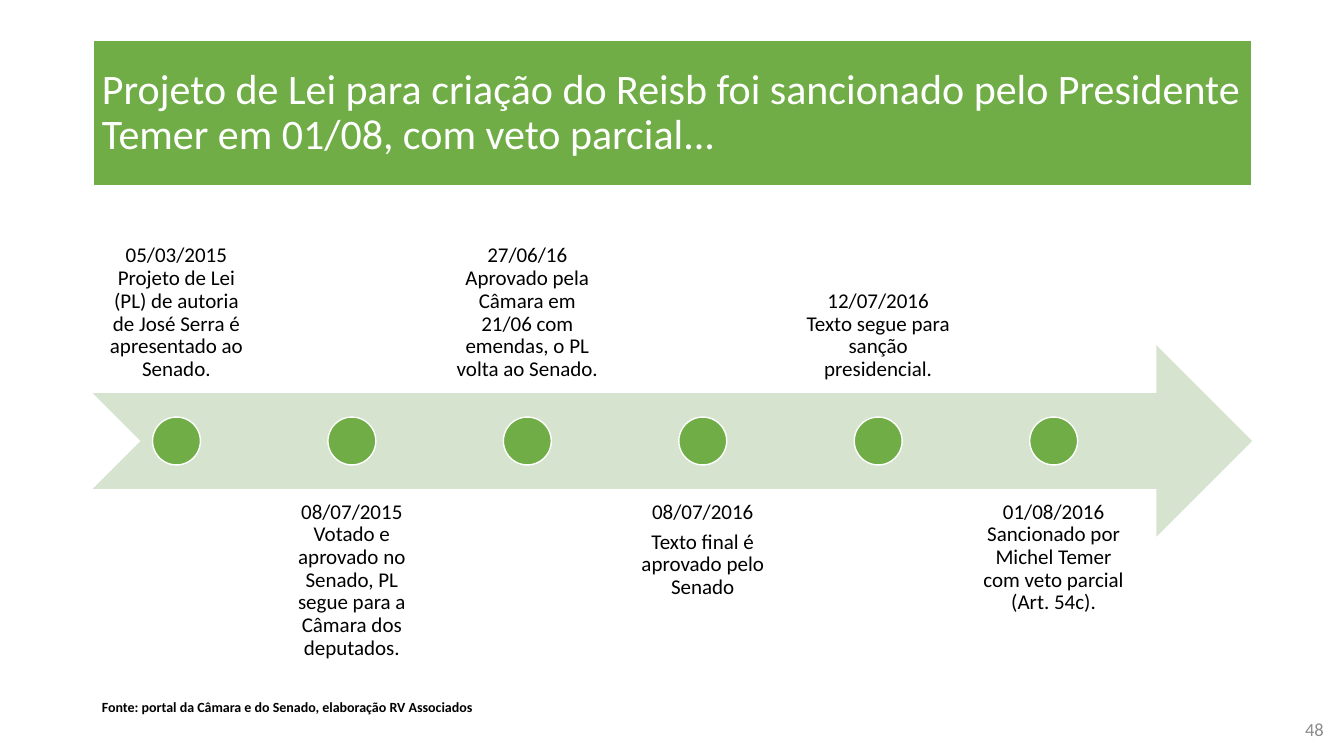
"""Build the timeline slide of the Reisb bill."""
from pptx import Presentation
from pptx.dml.color import RGBColor
from pptx.enum.shapes import MSO_SHAPE as Shape
from pptx.enum.text import MSO_ANCHOR as Anchor, MSO_AUTO_SIZE as AutoSize, PP_ALIGN as Align
from pptx.oxml.ns import qn
from pptx.util import Inches, Pt

GREEN = RGBColor(0x70, 0xAD, 0x47)
PALE = RGBColor(0xD5, 0xE3, 0xCF)
WHITE = RGBColor(0xFF, 0xFF, 0xFF)
BLACK = RGBColor(0x00, 0x00, 0x00)
GREY = RGBColor(0x8C, 0x8C, 0x8C)

STEPS = [
    ["05/03/2015 Projeto de Lei (PL) de autoria de José Serra é apresentado ao Senado."],
    ["08/07/2015 Votado e aprovado no Senado, PL segue para a Câmara dos deputados."],
    ["27/06/16 Aprovado pela Câmara em 21/06 com emendas, o PL volta ao Senado."],
    ["08/07/2016", "Texto final é aprovado pelo Senado"],
    ["12/07/2016 Texto segue para sanção presidencial."],
    ["01/08/2016 Sancionado por Michel Temer com veto parcial (Art. 54c)."],
]


class TimelineSlide:
    """Hold the style, the grid and the current slide."""

    font = "Calibri"
    left, top, width = 0.92, 2, 11.5
    col, row = 1.74, 0.475
    label_width = 1.66
    inset = (0.09, 0.05)

    def __init__(self, prs):
        """Add a slide with a title and a body placeholder."""
        self.slide = prs.slides.add_slide(prs.slide_layouts[1])
        self.shapes = self.slide.shapes

    def box(self, col, row, width, rows):
        """Turn a grid place into left, top, width and height."""
        return (Inches(self.left + col * self.col), Inches(self.top + row * self.row),
                Inches(width), Inches(rows * self.row))

    def place(self, s, box):
        """Move a placeholder to a box."""
        s.left, s.top, s.width, s.height = box

    def paint(self, s, fill, line=None):
        """Fill a shape and outline it in white if a line width is given."""
        s.fill.solid()
        s.fill.fore_color.rgb = fill
        if line:
            s.line.color.rgb = WHITE
            s.line.width = Pt(line)
        else:
            s.line.fill.background()

    def set_text(self, s, lines, size, color, align=Align.LEFT, anchor=Anchor.TOP,
                 inset=inset, spacing=0.9, bold=False):
        """Set the paragraphs of a shape and format them."""
        tf = s.text_frame
        tf.text = "\n".join(lines)
        tf.word_wrap = True
        tf.auto_size = AutoSize.NONE
        tf.vertical_anchor = anchor
        tf.margin_left = tf.margin_right = Inches(inset[0])
        tf.margin_top = tf.margin_bottom = Inches(inset[1])
        for p in tf.paragraphs:
            p.alignment = align
            p.line_spacing = spacing
            p.space_before = Pt(0)
            p.space_after = Pt(5.25)
            for r in p.runs:
                r.font.name = self.font
                r.font.size = Pt(size)
                r.font.bold = bold
                r.font.color.rgb = color
        tf.paragraphs[-1].space_after = Pt(0)

    def title(self, text):
        """Set the title band."""
        s = self.shapes.title
        self.place(s, (Inches(self.left), Inches(0.4), Inches(self.width), Inches(1.45)))
        self.paint(s, GREEN, 1.5)
        self.set_text(s, [text], 30, WHITE, anchor=Anchor.MIDDLE)

    def shape(self, kind, box, fill, line=None):
        """Add a painted preset shape."""
        s = self.shapes.add_shape(kind, *box)
        s.shadow.inherit = False
        self.paint(s, fill, line)

    def arrow(self):
        """Add the notched arrow behind the steps."""
        self.shape(Shape.NOTCHED_RIGHT_ARROW, self.box(0, 3, self.width, 4), PALE)

    def step(self, i, lines):
        """Add a label above or below the arrow, and its dot."""
        below = i % 2
        s = self.shapes.add_textbox(*self.box(i, 6 * below, self.label_width, 4))
        self.set_text(s, lines, 15, BLACK, Align.CENTER,
                      Anchor.TOP if below else Anchor.BOTTOM, (0.12, 0.12))
        offset = (self.label_width - self.row) / 2 / self.col
        self.shape(Shape.OVAL, self.box(i + offset, 4.5, self.row, 1), GREEN, 1)

    def source(self, text):
        """Set the source line in the body placeholder."""
        s = self.slide.placeholders[1]
        self.place(s, (Inches(self.left), Inches(6.9), Inches(9.64), Inches(0.38)))
        self.set_text(s, [text], 10, BLACK, bold=True)
        pPr = s.text_frame.paragraphs[0]._p.get_or_add_pPr()
        pPr.set("marL", "0")
        pPr.set("indent", "0")
        pPr.append(pPr.makeelement(qn("a:buNone"), {}))

    def number(self, text):
        """Add the page number."""
        s = self.shapes.add_textbox(Inches(12.57), Inches(7.03), Inches(0.65), Inches(0.4))
        self.set_text(s, [text], 13.2, GREY, Align.RIGHT, Anchor.MIDDLE, spacing=1.0)


def main():
    """Build and save the slide."""
    prs = Presentation()
    prs.slide_width, prs.slide_height = Inches(13.33), Inches(7.5)
    page = TimelineSlide(prs)
    page.title("Projeto de Lei para criação do Reisb foi sancionado pelo Presidente "
               "Temer em 01/08, com veto parcial...")
    page.arrow()
    for i, lines in enumerate(STEPS):
        page.step(i, lines)
    page.number("48")
    page.source("Fonte: portal da Câmara e do Senado, elaboração RV Associados")
    prs.save("out.pptx")


if __name__ == "__main__":
    main()
